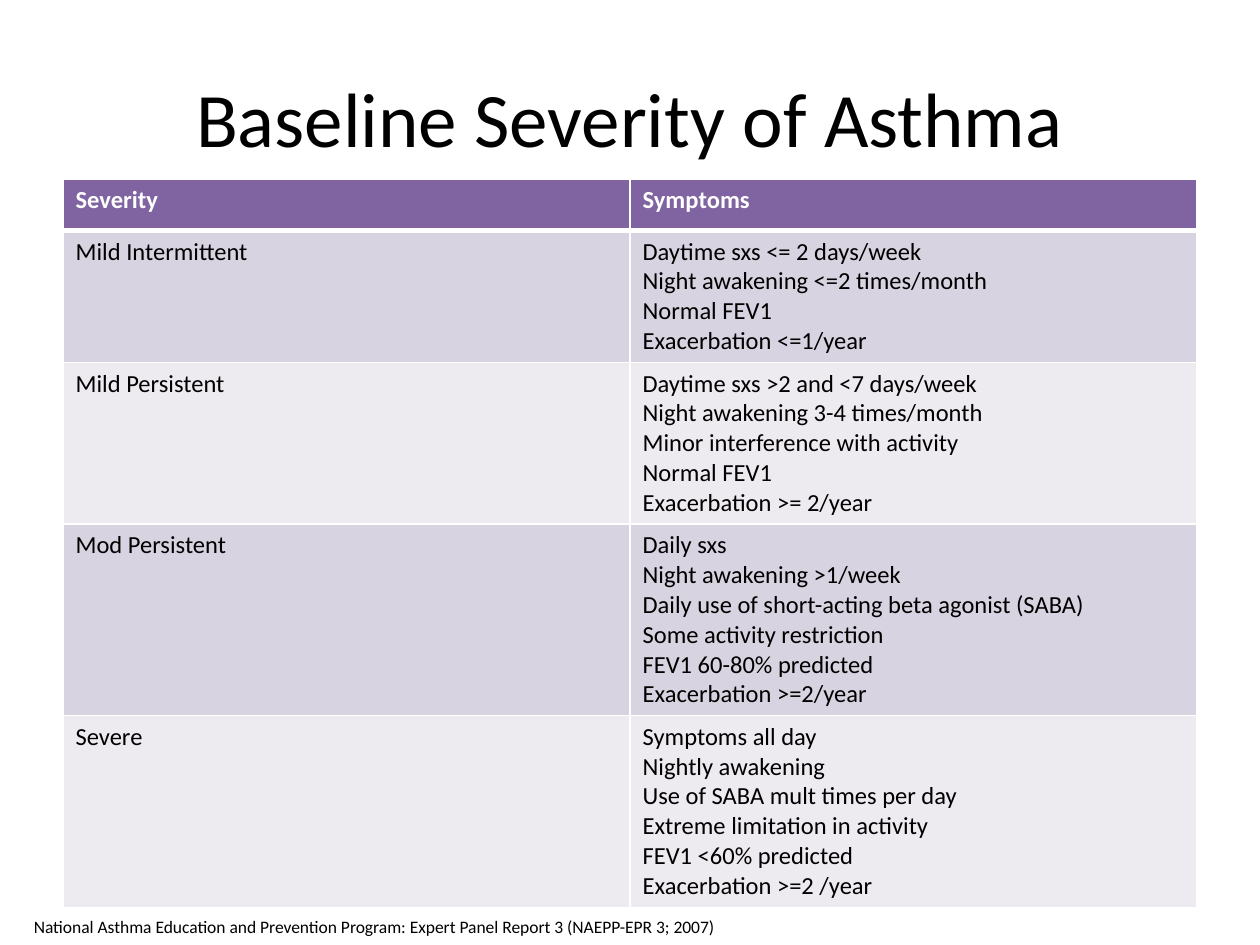
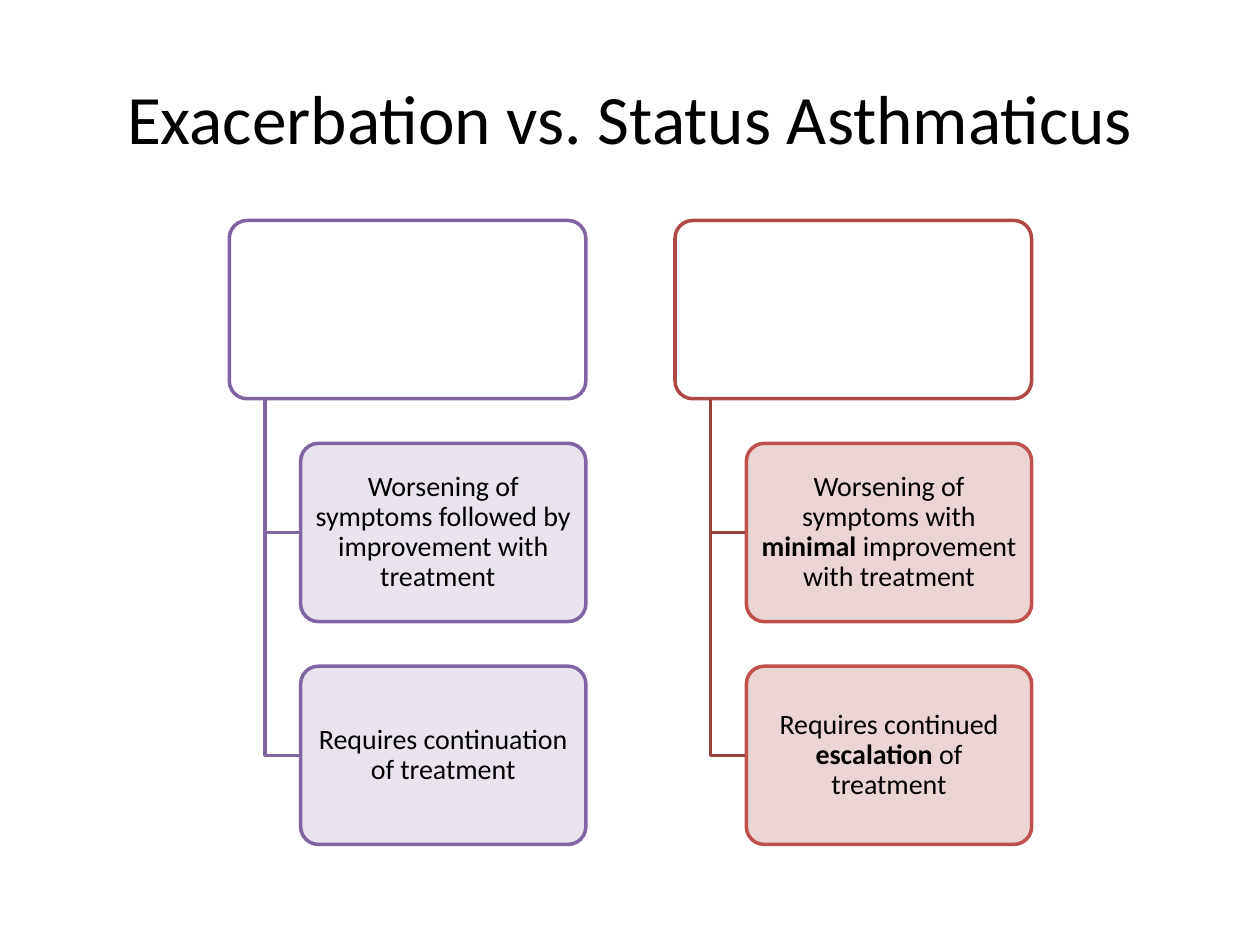
import pptx
import pptx.util
import pptx.dml.color
import pptx.enum.shapes
import pptx.enum.text
import pptx.oxml
import pptx.oxml.ns
import lxml.etree

Inches, Pt = pptx.util.Inches, pptx.util.Pt
FONT = "Calibri"
COLORS = {
    "black": "000000", "white": "FFFFFF",
    "purple": "8064A2", "band_dark": "D8D3E0", "band_light": "EDEAF0",
    "purple_tint": "E6E0EC",
    "red": "C0504D", "red_header": "AE4946", "red_branch": "9A403E", "red_tint": "E8D0D0",
}

SEVERITY_TITLE = ("Baseline Severity of Asthma", 44)
SEVERITY_HEADER = ("Severity", "Symptoms")
SEVERITY_ROWS = [
    ("Mild Intermittent", [
        "Daytime sxs <= 2 days/week", "Night awakening <=2 times/month",
        "Normal FEV1", "Exacerbation <=1/year"]),
    ("Mild Persistent", [
        "Daytime sxs >2 and <7 days/week", "Night awakening 3-4 times/month",
        "Minor interference with activity", "Normal FEV1", "Exacerbation >= 2/year"]),
    ("Mod Persistent", [
        "Daily sxs", "Night awakening >1/week",
        "Daily use of short-acting beta agonist (SABA)", "Some activity restriction",
        "FEV1 60-80% predicted", "Exacerbation >=2/year"]),
    ("Severe", [
        "Symptoms all day", "Nightly awakening", "Use of SABA mult times per day",
        "Extreme limitation in activity", "FEV1 <60% predicted", "Exacerbation >=2 /year"]),
]
CITATION = ("National Asthma Education and Prevention Program: "
            "Expert Panel Report 3 (NAEPP-EPR 3; 2007)")

COMPARISON_TITLE = ("Exacerbation vs. Status Asthmaticus", 39.6)
BRANCHES = [
    {"header": "purple", "branch": "purple", "line": "purple", "fill": "purple_tint",
     "cards": [
         [("Worsening of symptoms followed by improvement with treatment\t", False)],
         [("Requires continuation of treatment", False)]]},
    {"header": "red_header", "branch": "red_branch", "line": "red", "fill": "red_tint",
     "cards": [
         [("Worsening of symptoms with ", False), ("minimal", True),
          (" improvement with treatment", False)],
         [("Requires continued ", False), ("escalation", True), (" of treatment", False)]]},
]

TREE_LEFT, TREE_TOP = 1.82, 1.75
HEADER_W = 2.83
BOX_H = HEADER_W / 2
COLUMN_STEP, ROW_STEP = HEADER_W * 1.25, BOX_H * 1.25
TRUNK, INDENT = HEADER_W * 0.1, HEADER_W * 0.2


def rgb(name):
    return pptx.dml.color.RGBColor.from_string(COLORS[name])


def add_run(p, text, size, color="black", bold=False):
    r = p.add_run()
    r.text = text
    r.font.name, r.font.size, r.font.bold = FONT, Pt(size), bold
    r.font.color.rgb = rgb(color)


def add_titled_slide(prs, text, size):
    slide = prs.slides.add_slide(prs.slide_layouts[5])
    title = slide.shapes.title
    title.left, title.top, title.width, title.height = map(Inches, (0.5, 0.3, 9, 1.25))
    tf = title.text_frame
    tf.vertical_anchor = pptx.enum.text.MSO_ANCHOR.MIDDLE
    p = tf.paragraphs[0]
    p.alignment = pptx.enum.text.PP_ALIGN.CENTER
    add_run(p, text, size)
    return slide


def set_borders(cell, bottom):
    tcPr = cell._tc.get_or_add_tcPr()
    for side, width in (("L", 1), ("R", 1), ("T", 1), ("B", bottom)):
        ln = lxml.etree.SubElement(tcPr, pptx.oxml.ns.qn(f"a:ln{side}"), w=str(Pt(width)))
        fill = lxml.etree.SubElement(ln, pptx.oxml.ns.qn("a:solidFill"))
        lxml.etree.SubElement(fill, pptx.oxml.ns.qn("a:srgbClr"), val=COLORS["white"])


def fill_cell(cell, lines, fill, color="black", bold=False, bottom=1):
    set_borders(cell, bottom)
    cell.fill.solid()
    cell.fill.fore_color.rgb = rgb(fill)
    tf = cell.text_frame
    for i, line in enumerate(lines):
        p = tf.add_paragraph() if i else tf.paragraphs[0]
        add_run(p, line, 14, color, bold)


def add_severity_table(slide):
    table = slide.shapes.add_table(
        len(SEVERITY_ROWS) + 1, 2, *map(Inches, (0.5, 1.42, 9, 5.71))).table
    table.rows[0].height = Inches(0.41)
    for c, heading in enumerate(SEVERITY_HEADER):
        fill_cell(table.cell(0, c), [heading], "purple", "white", True, 3)
    for i, (severity, symptoms) in enumerate(SEVERITY_ROWS, 1):
        table.rows[i].height = Pt(7 + 17 * len(symptoms))
        band = "band_dark" if i % 2 else "band_light"
        fill_cell(table.cell(i, 0), [severity], band)
        fill_cell(table.cell(i, 1), symptoms, band)


def add_citation(slide):
    tf = slide.shapes.add_textbox(*map(Inches, (0.17, 7.22, 5.7, 0.27))).text_frame
    tf.word_wrap = False
    tf.auto_size = pptx.enum.text.MSO_AUTO_SIZE.SHAPE_TO_FIT_TEXT
    add_run(tf.paragraphs[0], CITATION, 10)


def style_line(sp, color):
    sp.line.color.rgb = rgb(color)
    sp.line.width = Pt(2)
    sp.shadow.inherit = False


def add_box(slide, x, y, w, fill, line):
    sp = slide.shapes.add_shape(pptx.enum.shapes.MSO_SHAPE.ROUNDED_RECTANGLE,
                                *map(Inches, (x, y, w, BOX_H)))
    sp.adjustments[0] = 0.1
    sp.fill.solid()
    sp.fill.fore_color.rgb = rgb(fill)
    style_line(sp, line)
    return sp


def add_elbow(slide, x, top, card_x, card_mid, color):
    builder = slide.shapes.build_freeform(Inches(x), Inches(top))
    builder.add_line_segments(
        [(Inches(x), Inches(card_mid)), (Inches(card_x), Inches(card_mid))], close=False)
    sp = builder.convert_to_shape()
    sp.fill.background()
    style_line(sp, color)


def add_card(slide, x, y, branch, runs):
    sp = add_box(slide, x, y, HEADER_W - INDENT, branch["fill"], branch["line"])
    clr = sp.fill._xPr.find(".//" + pptx.oxml.ns.qn("a:srgbClr"))
    lxml.etree.SubElement(clr, pptx.oxml.ns.qn("a:alpha"), val="90000")
    tf = sp.text_frame
    tf.word_wrap = True
    tf.vertical_anchor = pptx.enum.text.MSO_ANCHOR.MIDDLE
    tf.margin_left = tf.margin_right = Inches(0.03)
    tf.margin_top = tf.margin_bottom = Inches(0.02)
    p = tf.paragraphs[0]
    p.alignment = pptx.enum.text.PP_ALIGN.CENTER
    p.line_spacing = 0.9
    for text, bold in runs:
        add_run(p, text, 16, bold=bold)


def add_branch(slide, x, branch):
    add_box(slide, x, TREE_TOP, HEADER_W, "white", branch["header"])
    card_x = x + INDENT
    for i, runs in enumerate(branch["cards"], 1):
        y = TREE_TOP + i * ROW_STEP
        add_elbow(slide, x + TRUNK, TREE_TOP + BOX_H, card_x, y + BOX_H / 2, branch["branch"])
        add_card(slide, card_x, y, branch, runs)


def main():
    prs = pptx.Presentation()
    prs.slide_width, prs.slide_height = Inches(10), Inches(7.5)
    severity = add_titled_slide(prs, *SEVERITY_TITLE)
    add_severity_table(severity)
    add_citation(severity)
    comparison = add_titled_slide(prs, *COMPARISON_TITLE)
    for i, branch in enumerate(BRANCHES):
        add_branch(comparison, TREE_LEFT + i * COLUMN_STEP, branch)
    prs.save("out.pptx")


if __name__ == "__main__":
    main()
